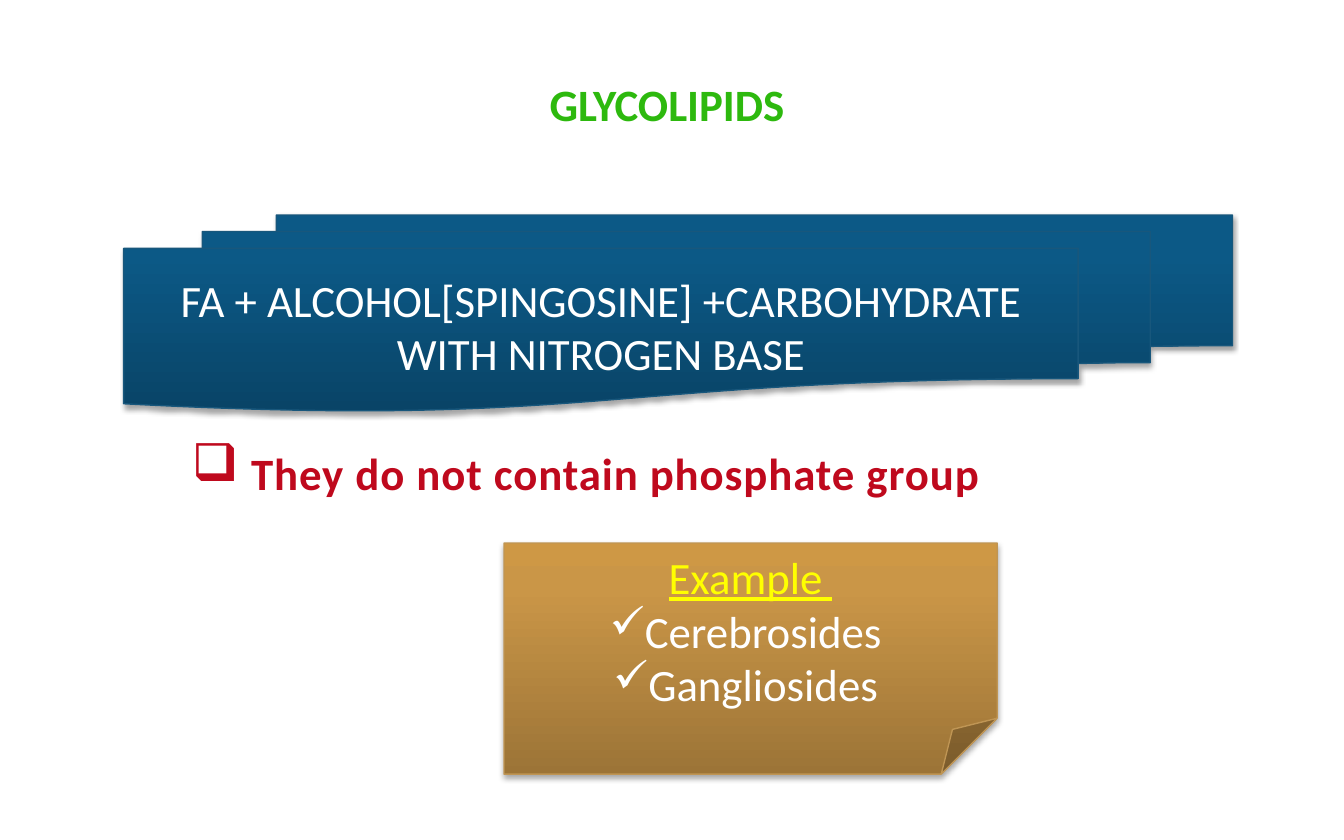
from lxml import etree
from pptx import Presentation
from pptx import util as u
from pptx.dml.color import RGBColor
from pptx.enum import shapes, text
from pptx.oxml.ns import qn

COLOURS = {
    "title": "2DB90E", "note": "BF091D", "white": "FFFFFF",
    "heading": "FFFF00", "shadow": "000000",
    "blue_line": "18577C", "gold_line": "BF9554",
}
# Gradient stops run from bottom to top
BLUE = [(0, "094467"), (80, "0C5986"), (100, "0A5A89")]
GOLD = [(0, "9C7437"), (80, "CA9647"), (100, "CE9845")]


def place(item, left, top, width, height):
    values = {"left": left, "top": top, "width": width, "height": height}
    for name, value in values.items():
        setattr(item, name, u.Inches(value))


def add_span(para, words, colour, size=24, **formats):
    span = para.add_run()
    span.text = words
    formats = {"name": "Calibri", "size": u.Pt(size), **formats}
    for name, value in formats.items():
        setattr(span.font, name, value)
    span.font.color.rgb = RGBColor.from_string(COLOURS[colour])
    return span


def add_bullet(para, mark):
    props = para._p.get_or_add_pPr()
    props.set("marL", "0")
    props.set("indent", "0")
    etree.SubElement(props, qn("a:buChar"), char=mark)


def add_panel(page, kind, box, stops, line):
    """Preset shape with a vertical gradient and a soft shadow."""
    panel = page.shapes.add_shape(kind, *[u.Inches(value) for value in box])
    panel.fill.gradient()
    panel.fill.gradient_angle = 90
    props = panel.element.spPr
    stop_list = props.find(".//" + qn("a:gsLst"))
    for old in list(stop_list):
        stop_list.remove(old)
    for percent, colour in stops:
        stop = etree.SubElement(stop_list, qn("a:gs"), pos=str(percent * 1000))
        etree.SubElement(stop, qn("a:srgbClr"), val=colour)
    panel.line.color.rgb = RGBColor.from_string(COLOURS[line])
    panel.line.width = u.Pt(0.75)

    panel.shadow.inherit = False
    shadow = etree.SubElement(
        props.find(qn("a:effectLst")), qn("a:outerShdw"),
        blurRad=str(u.Pt(3.1)), dist=str(u.Pt(1.8)), dir="5400000", rotWithShape="0")
    tint = etree.SubElement(shadow, qn("a:srgbClr"), val=COLOURS["shadow"])
    etree.SubElement(tint, qn("a:alpha"), val="35000")
    panel.text_frame.word_wrap = True
    return panel


def add_title(page):
    title = page.shapes.title
    place(title, 0.5, 0.25, 9, 1.04)
    title.text_frame.vertical_anchor = text.MSO_ANCHOR.MIDDLE
    para = title.text_frame.paragraphs[0]
    para.alignment = text.PP_ALIGN.CENTER
    add_span(para, "GLYCOLIPIDS ", "title", bold=True)


def add_formula(page):
    panel = add_panel(page, shapes.MSO_SHAPE.FLOWCHART_MULTIDOCUMENT,
                      (0.92, 1.6, 8.25, 1.46), BLUE, "blue_line")
    panel.text_frame.vertical_anchor = text.MSO_ANCHOR.MIDDLE
    para = panel.text_frame.paragraphs[0]
    para.alignment = text.PP_ALIGN.CENTER
    add_span(para, "FA + ALCOHOL[SPINGOSINE] +CARBOHYDRATE WITH NITROGEN BASE", "white")


def add_note(page):
    box = page.shapes.add_textbox(*[u.Inches(v) for v in (1.33, 3.21, 6.13, 0.57)])
    box.text_frame.word_wrap = False
    box.text_frame.auto_size = text.MSO_AUTO_SIZE.SHAPE_TO_FIT_TEXT
    para = box.text_frame.paragraphs[0]
    add_bullet(para, "❑")
    for words, size in ((" ", 28), ("They do not contain phosphate group", 24)):
        span = add_span(para, words, "note", size, bold=True)
        span.font._element.set("spc", "50")


def add_examples(page):
    panel = add_panel(page, shapes.MSO_SHAPE.FOLDED_CORNER,
                      (3.75, 4.04, 3.67, 1.72), GOLD, "gold_line")
    # Size of the folded corner
    guides = panel.element.spPr.find(".//" + qn("a:avLst"))
    etree.SubElement(guides, qn("a:gd"), name="adj", fmla="val 24200")
    frame = panel.text_frame
    frame.vertical_anchor = text.MSO_ANCHOR.TOP
    heading = frame.paragraphs[0]
    add_span(heading, "Example ", "heading", underline=True)
    for name in ("Cerebrosides ", "Gangliosides "):
        para = frame.add_paragraph()
        add_bullet(para, "✓")
        add_span(para, name, "white")
    for para in frame.paragraphs:
        para.alignment = text.PP_ALIGN.CENTER


def main():
    deck = Presentation()
    deck.slide_width = u.Inches(10)
    deck.slide_height = u.Inches(6.25)
    page = deck.slides.add_slide(deck.slide_layouts.get_by_name("Title Only"))
    add_formula(page)
    add_note(page)
    add_examples(page)
    add_title(page)
    deck.save("out.pptx")


if __name__ == "__main__":
    main()
